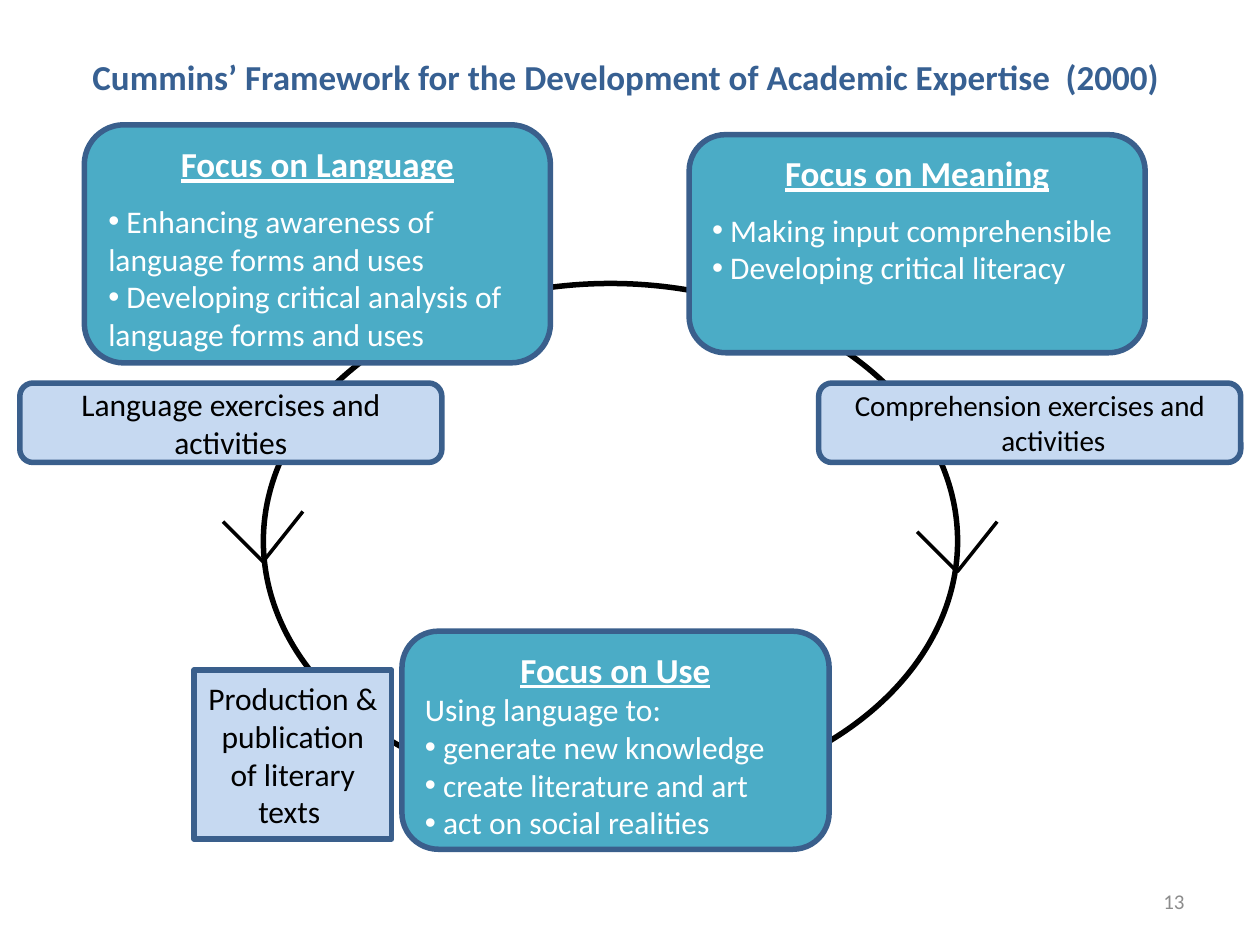
from pptx import Presentation
from pptx.dml.color import RGBColor
from pptx.enum.shapes import MSO_CONNECTOR, MSO_SHAPE
from pptx.enum.text import MSO_ANCHOR, PP_ALIGN
from pptx.oxml.ns import qn
from pptx.util import Pt
from lxml import etree

COLORS = {"teal": "4BACC6", "pale": "C6D9F1", "edge": "3A5F8C", "title": "376092",
          "black": "000000", "white": "FFFFFF", "gray": "8C8C8C"}


def draw(kind, box, fill=None, edge="edge"):
    """Add an outlined shape, or a plain text box if kind is None."""
    spot = [Pt(n) for n in box]
    if kind is None:
        shape = slide.shapes.add_textbox(*spot)
    else:
        shape = slide.shapes.add_shape(kind, *spot)
        shape.shadow.inherit = False
        shape.line.color.rgb = RGBColor.from_string(COLORS[edge])
        shape.line.width = Pt(3.15)
        if fill:
            shape.fill.solid()
            shape.fill.fore_color.rgb = RGBColor.from_string(COLORS[fill])
        else:
            shape.fill.background()
    shape.text_frame.word_wrap = True
    shape.text_frame.vertical_anchor = MSO_ANCHOR.MIDDLE
    return shape.text_frame


def write(para, text, size, color, align=PP_ALIGN.CENTER, bold=False):
    para.text = text
    para.alignment = align
    font = para.font
    font.name, font.size, font.bold = "Calibri", Pt(size), bold
    font.color.rgb = RGBColor.from_string(COLORS[color])


deck = Presentation()
deck.slide_width, deck.slide_height = Pt(720), Pt(540)
slide = deck.slides.add_slide(deck.slide_layouts[6])

# Cycle behind the boxes
draw(MSO_SHAPE.OVAL, (150.5, 162, 396.7, 294.5), edge="black")

title = draw(None, (36, 21.6, 648, 43.9))
write(title.paragraphs[0],
      "Cummins’ Framework for the Development of Academic Expertise  (2000) ",
      20, "title", bold=True)

# Focus boxes: place, heading, gap below it, lines
focus = [
    ((48.2, 71.3, 266.4, 136.1), "Focus on Language", 9.8,
     ["• Enhancing awareness of language forms and uses",
      "• Developing critical analysis of language forms and uses"]),
    ((393.8, 77, 260.6, 124.6), "Focus on Meaning", 9.8,
     ["• Making input comprehensible", "• Developing critical literacy"]),
    ((229.7, 360.7, 244.1, 124.6), "Focus on Use", 0,
     ["Using language to:", "• generate new knowledge",
      "• create literature and art", "• act on social realities"]),
]
for box, head, gap, lines in focus:
    frame = draw(MSO_SHAPE.ROUNDED_RECTANGLE, box, "teal")
    frame.vertical_anchor = MSO_ANCHOR.TOP
    first = frame.paragraphs[0]
    write(first, head, 20, "white", bold=True)
    first.font.underline = True
    first.space_after = Pt(gap)
    for line in lines:
        para = frame.add_paragraph()
        write(para, line.removeprefix("•"), 18, "white", PP_ALIGN.LEFT)
        if line.startswith("•"):
            props = para._p.get_or_add_pPr()
            font = etree.Element(qn("a:buFont"), typeface="Arial")
            mark = etree.Element(qn("a:buChar"), char="•")
            props.find(qn("a:defRPr")).addprevious(font)
            font.addnext(mark)

# Arrowheads on the cycle, each with its tip at the bottom
for x, y in [(150.3, 321), (547, 326.8)]:
    for dx, dy in [(-22.9, -22.9), (22.8, -28.7)]:
        stroke = slide.shapes.add_connector(
            MSO_CONNECTOR.STRAIGHT, Pt(x + dx), Pt(y + dy), Pt(x), Pt(y))
        stroke.line.color.rgb = RGBColor.from_string(COLORS["black"])
        stroke.line.width = Pt(2)
        etree.SubElement(stroke._element.spPr, qn("a:effectLst"))

# Activity labels
labels = [
    (MSO_SHAPE.ROUNDED_RECTANGLE, (11.3, 218.9, 241.2, 45.4), 18, 0,
     "Language exercises and activities"),
    (MSO_SHAPE.ROUNDED_RECTANGLE, (467.8, 218.9, 241.2, 45.4), 16.6, 27,
     "Comprehension exercises and activities"),
    (MSO_SHAPE.RECTANGLE, (110.9, 383, 113, 96.5), 18, 0,
     "Production & publication of literary texts "),
]
for kind, box, size, hang, text in labels:
    para = draw(kind, box, "pale").paragraphs[0]
    write(para, text, size, "black")
    if hang:
        props = para._p.get_or_add_pPr()
        props.set("marL", str(Pt(hang)))
        props.set("indent", str(Pt(-hang)))

number = draw(None, (516.2, 500.4, 167.8, 28.8))
write(number.paragraphs[0], "13", 12, "gray", PP_ALIGN.RIGHT)

deck.save("out.pptx")
